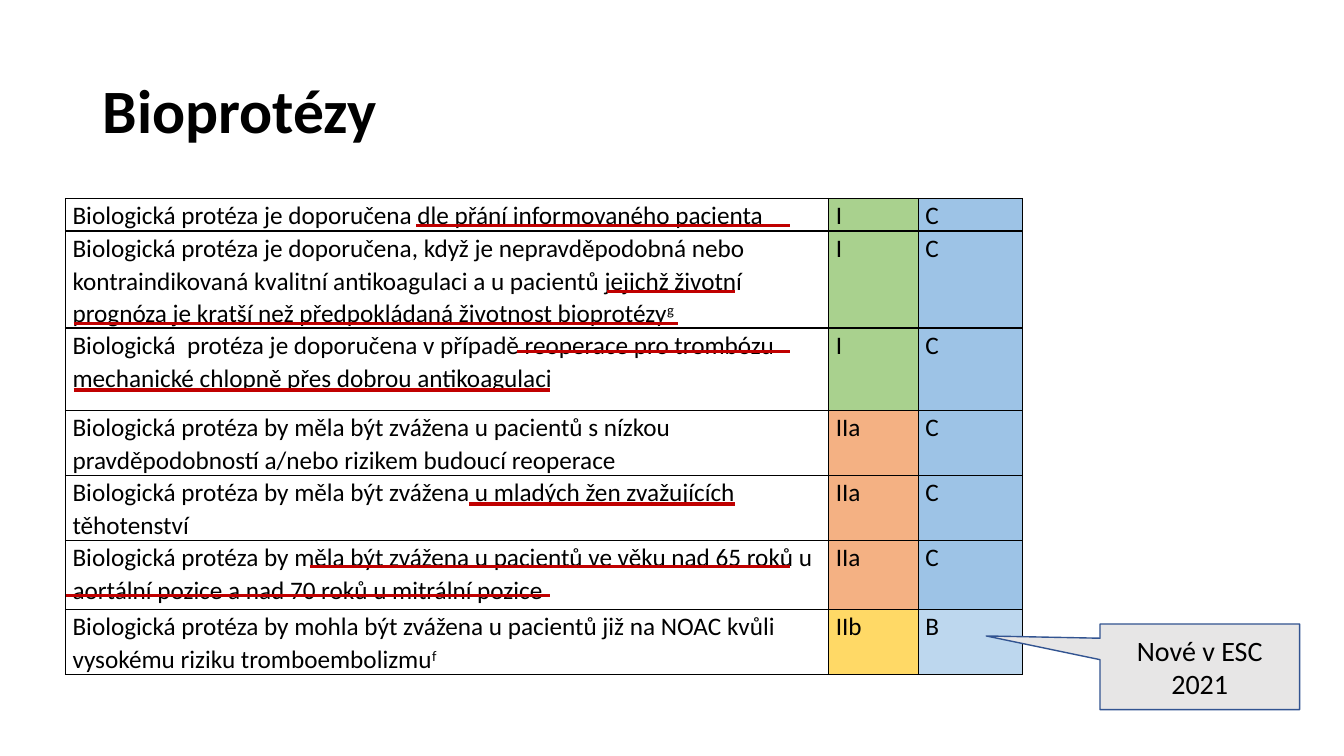
import dataclasses

import lxml.etree
import pptx
import pptx.dml.color
import pptx.enum.shapes
import pptx.enum.text
import pptx.oxml.ns
import pptx.util

Inches = pptx.util.Inches
Pt = pptx.util.Pt
RGBColor = pptx.dml.color.RGBColor
qn = pptx.oxml.ns.qn

BLACK = RGBColor(0x00, 0x00, 0x00)
GREEN = RGBColor(0xA9, 0xD1, 0x8E)
ORANGE = RGBColor(0xF4, 0xB1, 0x83)
YELLOW = RGBColor(0xFF, 0xD9, 0x66)
BLUE = RGBColor(0x9D, 0xC3, 0xE6)
PALE_BLUE = RGBColor(0xBD, 0xD7, 0xEE)
GREY = RGBColor(0xE7, 0xE6, 0xE6)
OUTLINE_BLUE = RGBColor(0x32, 0x54, 0x91)
RED = RGBColor(0xC0, 0x00, 0x00)

CLASS_FILLS = {"I": GREEN, "IIa": ORANGE, "IIb": YELLOW}
LEVEL_FILLS = {"B": PALE_BLUE, "C": BLUE}
COLUMN_WIDTHS = (7.57, 0.89, 1.03)


@dataclasses.dataclass(frozen=True)
class Recommendation:
    height: float
    text: str
    grade: str
    level: str = "C"
    footnote: str = ""


@dataclasses.dataclass(frozen=True)
class Underline:
    left: float
    right: float
    y: float


RECOMMENDATIONS = (
    Recommendation(0.29, "Biologická protéza je doporučena dle přání informovaného pacienta", "I"),
    Recommendation(
        0.9,
        "Biologická protéza je doporučena, když je nepravděpodobná nebo "
        "kontraindikovaná kvalitní antikoagulaci a u pacientů jejichž životní "
        "prognóza je kratší než předpokládaná životnost bioprotézy",
        "I", footnote="g"),
    Recommendation(
        0.82,
        "Biologická  protéza je doporučena v případě reoperace pro trombózu "
        "mechanické chlopně přes dobrou antikoagulaci", "I"),
    Recommendation(
        0.6,
        "Biologická protéza by měla být zvážena u pacientů s nízkou "
        "pravděpodobností a/nebo rizikem budoucí reoperace", "IIa"),
    Recommendation(
        0.29,
        "Biologická protéza by měla být zvážena u mladých žen zvažujících těhotenství", "IIa"),
    Recommendation(
        0.69,
        "Biologická protéza by měla být zvážena u pacientů ve věku nad 65 roků u "
        "aortální pozice a nad 70 roků u mitrální pozice", "IIa"),
    Recommendation(
        0.6,
        "Biologická protéza by mohla být zvážena u pacientů již na NOAC kvůli "
        "vysokému riziku tromboembolizmu", "IIb", "B", "f"),
)

UNDERLINES = (
    Underline(4.13, 7.84, 2.24),
    Underline(3.07, 7.84, 5.62),
    Underline(0.65, 5.45, 5.91),
    Underline(4.65, 7.29, 5.0),
    Underline(5.13, 7.84, 3.49),
    Underline(0.73, 5.45, 3.87),
    Underline(6.02, 7.29, 2.89),
    Underline(0.73, 6.72, 3.21),
)


def add_run(paragraph, text: str, size: float, bold: bool = False):
    run = paragraph.add_run()
    run.text = text
    formats = {"name": "Calibri", "size": Pt(size), "bold": bold}
    for attribute, value in formats.items():
        setattr(run.font, attribute, value)
    run.font.color.rgb = BLACK
    return run


def add_title(slide, text: str) -> None:
    box = slide.shapes.add_textbox(Inches(0.92), Inches(0.4), Inches(11.5), Inches(1.45))
    box.text_frame.word_wrap = True
    box.text_frame.vertical_anchor = pptx.enum.text.MSO_ANCHOR.MIDDLE
    paragraph = box.text_frame.paragraphs[0]
    paragraph.line_spacing = 0.9
    add_run(paragraph, text, 44, bold=True)


def add_borders(cell) -> None:
    properties = cell._tc.get_or_add_tcPr()
    for position, side in enumerate(("lnL", "lnR", "lnT", "lnB")):
        border = lxml.etree.Element(qn(f"a:{side}"), w=str(Pt(1)))
        fill = lxml.etree.SubElement(border, qn("a:solidFill"))
        lxml.etree.SubElement(fill, qn("a:srgbClr"), val=str(BLACK))
        properties.insert(position, border)


def fill_cell(cell, text: str, color: RGBColor | None, footnote: str = "") -> None:
    margins = {"margin_left": 0.07, "margin_right": 0.07, "margin_top": 0, "margin_bottom": 0}
    for attribute, value in margins.items():
        setattr(cell, attribute, Inches(value))
    if color is None:
        cell.fill.background()
    else:
        cell.fill.solid()
        cell.fill.fore_color.rgb = color
    add_borders(cell)
    paragraph = cell.text_frame.paragraphs[0]
    paragraph.line_spacing = 1.07
    add_run(paragraph, text, 18)
    if footnote:
        run = add_run(paragraph, footnote, 18)
        run._r.get_or_add_rPr().set("baseline", "30000")


def add_recommendations(slide) -> None:
    height = sum(row.height for row in RECOMMENDATIONS)
    table = slide.shapes.add_table(
        len(RECOMMENDATIONS), len(COLUMN_WIDTHS),
        Inches(0.65), Inches(1.97), Inches(sum(COLUMN_WIDTHS)), Inches(height)).table
    table.first_row = False
    table.horz_banding = False
    for column, width in zip(table.columns, COLUMN_WIDTHS):
        column.width = Inches(width)
    for row, item in zip(table.rows, RECOMMENDATIONS):
        row.height = Inches(item.height)
        text_cell, grade_cell, level_cell = row.cells
        fill_cell(text_cell, item.text, None, item.footnote)
        fill_cell(grade_cell, item.grade, CLASS_FILLS[item.grade])
        fill_cell(level_cell, item.level, LEVEL_FILLS[item.level])


def add_callout(slide, text: str) -> None:
    shape = slide.shapes.add_shape(
        pptx.enum.shapes.MSO_SHAPE.RECTANGULAR_CALLOUT,
        Inches(10.91), Inches(6.19), Inches(1.98), Inches(0.85))
    shape.adjustments[0] = -1.07
    shape.adjustments[1] = -0.36
    shape.shadow.inherit = False
    shape.fill.solid()
    shape.fill.fore_color.rgb = GREY
    shape.line.color.rgb = OUTLINE_BLUE
    shape.line.width = Pt(1)
    shape.text_frame.word_wrap = True
    shape.text_frame.vertical_anchor = pptx.enum.text.MSO_ANCHOR.MIDDLE
    paragraph = shape.text_frame.paragraphs[0]
    paragraph.alignment = pptx.enum.text.PP_ALIGN.CENTER
    add_run(paragraph, text, 20)


def add_underline(slide, underline: Underline) -> None:
    connector = slide.shapes.add_connector(
        pptx.enum.shapes.MSO_CONNECTOR.STRAIGHT,
        Inches(underline.left), Inches(underline.y),
        Inches(underline.right), Inches(underline.y))
    connector.line.color.rgb = RED
    connector.line.width = Pt(2.25)
    lxml.etree.SubElement(connector._element.spPr, qn("a:effectLst"))


def main() -> None:
    presentation = pptx.Presentation()
    presentation.slide_width = Inches(13.33)
    presentation.slide_height = Inches(7.5)
    slide = presentation.slides.add_slide(presentation.slide_layouts[6])

    # Title and graded recommendations
    add_title(slide, "Bioprotézy")
    add_recommendations(slide)

    # Callout and red emphasis lines
    add_callout(slide, "Nové v ESC 2021")
    for underline in UNDERLINES:
        add_underline(slide, underline)

    presentation.save("out.pptx")


if __name__ == "__main__":
    main()
